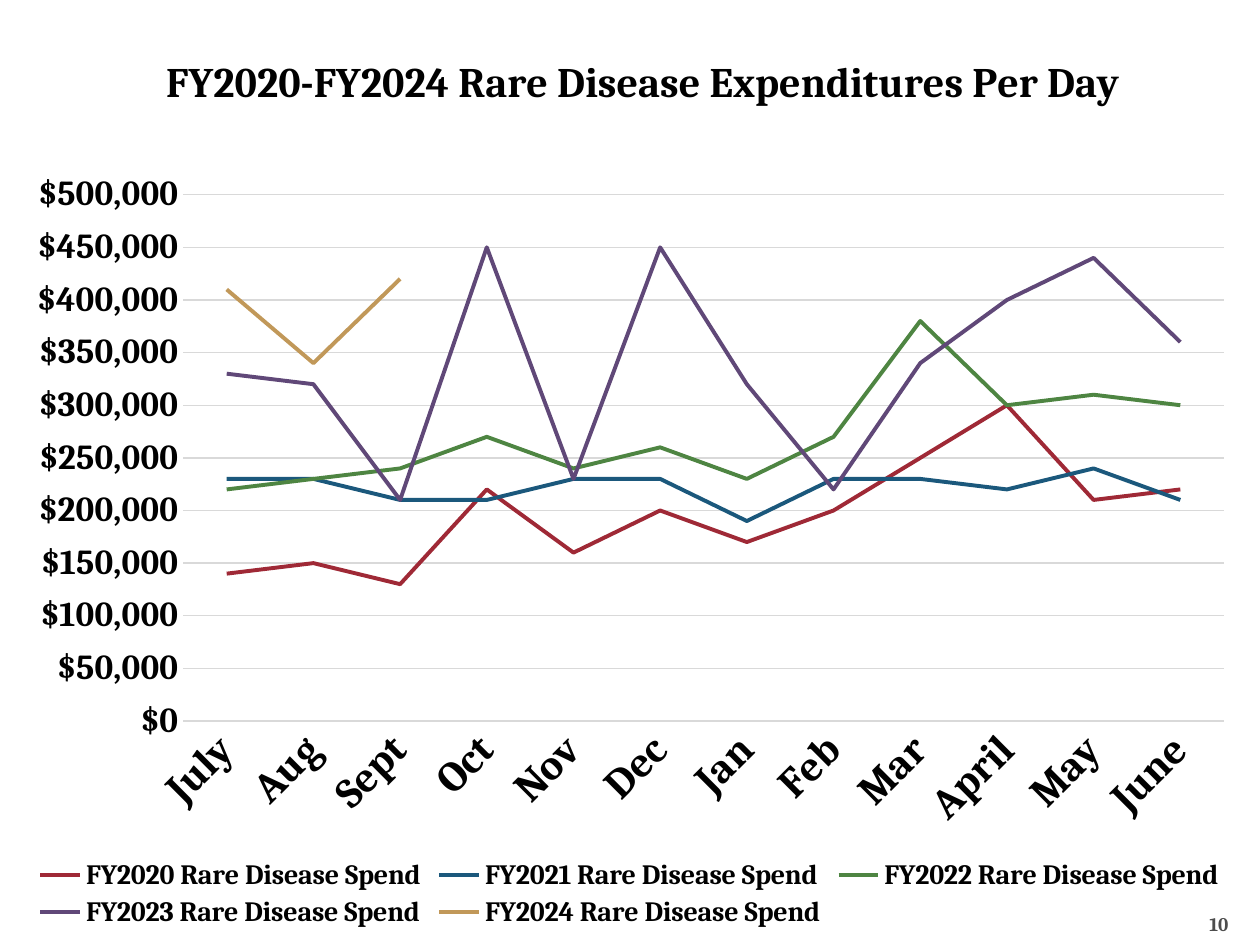
from pptx import Presentation
from pptx.chart.data import CategoryChartData
from pptx.dml.color import RGBColor
from pptx.enum.chart import XL_CHART_TYPE, XL_LEGEND_POSITION, XL_MARKER_STYLE, XL_TICK_MARK
from pptx.enum.text import MSO_ANCHOR, PP_ALIGN
from pptx.oxml import parse_xml
from pptx.oxml.ns import nsdecls, qn
from pptx.util import Inches, Pt

LINE = XL_CHART_TYPE.LINE
BOTTOM = XL_LEGEND_POSITION.BOTTOM
PLAIN = XL_MARKER_STYLE.NONE
NO_TICK = XL_TICK_MARK.NONE
LOW = MSO_ANCHOR.BOTTOM
RIGHT = PP_ALIGN.RIGHT

MONTHS = ["July", "Aug", "Sept", "Oct", "Nov", "Dec",
          "Jan", "Feb", "Mar", "April", "May", "June"]
SPEND = {
    2020: ("9F2936", [140, 150, 130, 220, 160, 200, 170, 200, 250, 300, 210, 220]),
    2021: ("1B587C", [230, 230, 210, 210, 230, 230, 190, 230, 230, 220, 240, 210]),
    2022: ("4E8542", [220, 230, 240, 270, 240, 260, 230, 270, 380, 300, 310, 300]),
    2023: ("604878", [330, 320, 210, 450, 230, 450, 320, 220, 340, 400, 440, 360]),
    2024: ("C19859", [410, 340, 420] + [None] * 9),
}


def color(code):
    return RGBColor.from_string(code)


class Deck:
    face = "Cambria"
    ink = "000000"
    grid = "D9D9D9"

    def __init__(self, wide, high):
        self.prs = Presentation()
        self.prs.slide_width = Inches(wide)
        self.prs.slide_height = Inches(high)
        self.slide = self.prs.slides.add_slide(self.prs.slide_layouts[6])

    def style(self, font, size, code=None, bold=True):
        form = {"name": self.face, "size": Pt(size), "bold": bold}
        for key, value in form.items():
            setattr(font, key, value)
        font.color.rgb = color(code or self.ink)

    def stroke(self, line, code, width):
        line.color.rgb = color(code)
        line.width = Pt(width)

    def text(self, words, box, size, code):
        frame = self.slide.shapes.add_textbox(*map(Inches, box)).text_frame
        form = {"word_wrap": True, "vertical_anchor": LOW, "margin_left": 0,
                "margin_right": 0, "margin_top": Inches(0.05), "margin_bottom": 0}
        for key, value in form.items():
            setattr(frame, key, value)
        para = frame.paragraphs[0]
        para.alignment = RIGHT
        run = para.add_run()
        run.text = words
        self.style(run.font, size, code)

    def place(self, node, index, spots, inner=False):
        for old in node.findall(qn("c:layout")):
            node.remove(old)
        tags = '<c:layoutTarget val="inner"/>' if inner else ""
        tags += "".join(f'<c:{key}Mode val="edge"/>' for key in "xy")
        tags += "".join(f'<c:{key} val="{value}"/>' for key, value in spots.items())
        node.insert(index, parse_xml(
            f'<c:layout {nsdecls("c")}><c:manualLayout>{tags}'
            '</c:manualLayout></c:layout>'))

    def chart(self, title, box):
        data = CategoryChartData()
        data.categories = MONTHS
        for year, (_, costs) in SPEND.items():
            data.add_series(f"FY{year} Rare Disease Spend",
                            [cost and cost * 1000 for cost in costs])
        chart = self.slide.shapes.add_chart(LINE, *map(Inches, box), data).chart
        self.style(chart.font, 10, bold=False)

        chart.has_title = True
        para = chart.chart_title.text_frame.paragraphs[0]
        run = para.add_run()
        run.text = title
        self.style(run.font, 24)
        self.place(chart.chart_title._element, 1, {"x": 0.12, "y": 0.04})
        area = chart._chartSpace.chart.plotArea
        self.place(area, 0, {"x": 0.14, "y": 0.2, "w": 0.84, "h": 0.57}, True)

        plot = chart.plots[0]
        plot.vary_by_categories = False
        for series, (code, _) in zip(plot.series, SPEND.values()):
            series.smooth = False
            series.marker.style = PLAIN
            self.stroke(series.format.line, code, 2.25)
        self.axes(chart)

        chart.has_legend = True
        chart.legend.position = BOTTOM
        chart.legend.include_in_layout = False
        self.style(chart.legend.font, 16)

    def axes(self, chart):
        months, costs = chart.category_axis, chart.value_axis
        for axis, size in ((months, 24), (costs, 20)):
            axis.major_tick_mark = axis.minor_tick_mark = NO_TICK
            self.style(axis.tick_labels.font, size)
        self.stroke(months.format.line, self.grid, 0.75)
        months._element.xpath("c:txPr/a:bodyPr")[0].set("rot", "-2700000")

        form = {"minimum_scale": 0, "maximum_scale": 500000,
                "major_unit": 50000, "has_major_gridlines": True}
        for key, value in form.items():
            setattr(costs, key, value)
        costs.format.line.fill.background()
        self.stroke(costs.major_gridlines.format.line, self.grid, 0.75)
        costs.tick_labels.number_format = '"$"#,##0'
        costs.tick_labels.number_format_is_linked = False


def main():
    deck = Deck(10, 7.5)
    deck.text("10", (9.25, 7.02, 0.5, 0.4), 11, "4D4D4D")
    deck.chart("FY2020-FY2024 Rare Disease Expenditures Per Day",
               (0.08, 0.08, 9.83, 7.33))
    deck.prs.save("out.pptx")


if __name__ == "__main__":
    main()
